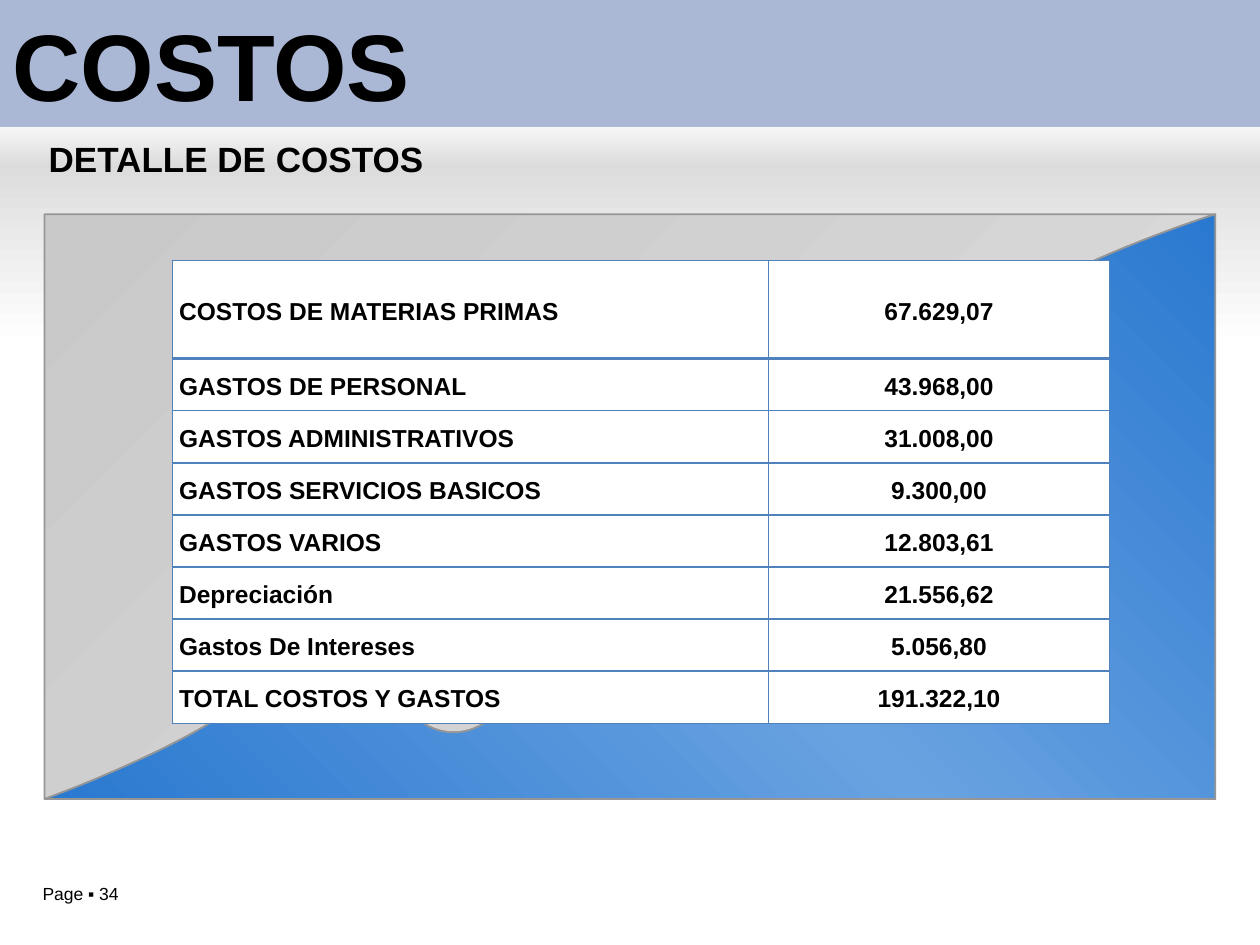
import pptx
import pptx.dml.color
import pptx.enum.shapes
import pptx.enum.text
import pptx.oxml
import pptx.oxml.ns
import pptx.util
from pptx.util import Cm

Pt = pptx.util.Pt
RGB = pptx.dml.color.RGBColor.from_string
ALIGN = pptx.enum.text.PP_ALIGN
MIDDLE = pptx.enum.text.MSO_ANCHOR.MIDDLE
RECT = pptx.enum.shapes.MSO_SHAPE.RECTANGLE
NS = pptx.oxml.ns.nsdecls("a")
qn = pptx.oxml.ns.qn

COLORS = {
    "text": "000000",
    "white": "FFFFFF",
    "band": "AAB7D5",
    "glow_top": "DBDBDB",
    "glow_bottom": "DDDDDD",
    "grey_dark": "C9C9C9",
    "grey_light": "DEDEDE",
    "blue": "2A79D0",
    "blue_light": "69A2E1",
    "outline": "969696",
    "border": "4F81BD",
}


def write(tf, text, size=14, bold=True, align=ALIGN.LEFT, spacing=None, after=None):
    p = tf.paragraphs[0]
    p.alignment = align
    if spacing is not None:
        p.line_spacing = spacing
    if after is not None:
        p.space_after = Pt(after)
    r = p.add_run()
    r.text = text
    r.font.name = "Arial"
    r.font.size = Pt(size)
    r.font.bold = bold
    r.font.color.rgb = RGB(COLORS["text"])


def gradient(sp, names, angle):
    sp.shadow.inherit = False
    sp.fill.background()
    stops = "".join(
        f'<a:gs pos="{100000 * i // (len(names) - 1)}"><a:srgbClr val="{COLORS[n]}"/></a:gs>'
        for i, n in enumerate(names)
    )
    fill = pptx.oxml.parse_xml(
        f'<a:gradFill {NS} rotWithShape="1"><a:gsLst>{stops}</a:gsLst>'
        f'<a:lin ang="{angle * 60000}" scaled="0"/></a:gradFill>'
    )
    spPr = sp._element.spPr
    spPr.replace(spPr.find(qn("a:noFill")), fill)


prs = pptx.Presentation()
prs.slide_width, prs.slide_height = Cm(25.4), Cm(19.05)
s = prs.slides.add_slide(prs.slide_layouts[5])

for top, height, names in [
    (3.35, 3.61, ["glow_bottom", "white"]),
    (2.29, 1.09, ["white", "glow_top"]),
]:
    sp = s.shapes.add_shape(RECT, 0, Cm(top), prs.slide_width, Cm(height))
    gradient(sp, names, 90)
    sp.line.fill.background()

title = s.shapes.title
title.left, title.top, title.width, title.height = 0, 0, prs.slide_width, Cm(2.56)
title.fill.solid()
title.fill.fore_color.rgb = RGB(COLORS["band"])
title.text_frame.vertical_anchor = MIDDLE
title.text_frame.auto_size = pptx.enum.text.MSO_AUTO_SIZE.NONE
write(title.text_frame, "COSTOS", size=54)

sp = s.shapes.add_textbox(Cm(0.85), Cm(2.77), Cm(7.82), Cm(0.86))
tf = sp.text_frame
tf.word_wrap = False
tf.margin_left = tf.margin_right = tf.margin_top = tf.margin_bottom = 0
write(tf, "DETALLE DE COSTOS", size=20, align=ALIGN.CENTER)

sp = s.shapes.add_textbox(Cm(0.61), Cm(17.68), Cm(3.73), Cm(0.69))
sp.text_frame.word_wrap = True
write(sp.text_frame, "Page ▪ 34", size=10, bold=False)

UNIT = Cm(0.0254)
START = (35, 635)
CURVES = [
    [(35, 635), (61, 625), (61, 625)],
    [(98, 610), (166, 580), (189, 558)],
    [(192, 555), (209, 540), (233, 528)],
    [(257, 516), (279, 511), (284, 510)],
    [(299, 507), (311, 516), (313, 520)],
    [(318, 526), (318, 536), (318, 540)],
    [(318, 546), (320, 553), (322, 559)],
    [(333, 580), (359, 588), (380, 577)],
    [(400, 567), (409, 542), (398, 521)],
    [(395, 515), (390, 510), (385, 506)],
    [(382, 504), (374, 498), (372, 491)],
    [(371, 486), (370, 473), (381, 462)],
    [(385, 459), (402, 444), (426, 431)],
    [(450, 419), (473, 414), (477, 414)],
    [(477, 414), (503, 409), (529, 395)],
    [(556, 382), (574, 365), (574, 365)],
    [(585, 355), (584, 340), (583, 337)],
    [(581, 329), (573, 323), (570, 321)],
    [(565, 317), (560, 312), (557, 306)],
    [(546, 286), (555, 260), (576, 250)],
    [(596, 239), (622, 248), (633, 268)],
    [(636, 274), (637, 281), (637, 288)],
    [(637, 291), (637, 301), (642, 307)],
    [(644, 310), (654, 319), (669, 317)],
    [(678, 315), (700, 310), (722, 299)],
    [(743, 289), (759, 277), (767, 268)],
    [(822, 215), (965, 170), (965, 170)],
]
edge = [point for curve in CURVES for point in curve]

for corner, names, angle in [
    ((35, 170), ["grey_dark", "grey_light"], 45),
    ((965, 635), ["blue", "blue_light", "blue"], 315),
]:
    builder = s.shapes.build_freeform(*START, scale=UNIT)
    builder.add_line_segments(edge + [corner], close=True)
    sp = builder.convert_to_shape()
    lines = list(sp._element.iter(qn("a:lnTo")))
    for i in range(0, len(edge), 3):
        curve = pptx.oxml.parse_xml(f"<a:cubicBezTo {NS}/>")
        lines[i].addprevious(curve)
        for line in lines[i:i + 3]:
            curve.append(line[0])
            line.getparent().remove(line)
    sp.left, sp.top, sp.width, sp.height = Cm(0.9), Cm(4.32), Cm(23.6), Cm(11.79)
    gradient(sp, names, angle)
    sp.line.color.rgb = RGB(COLORS["outline"])
    sp.line.width = Pt(1)

ROWS = [
    ("COSTOS DE MATERIAS PRIMAS", "67.629,07", 10),
    ("GASTOS DE PERSONAL", "43.968,00", 10),
    ("GASTOS ADMINISTRATIVOS", "31.008,00", 10),
    ("GASTOS SERVICIOS BASICOS", "9.300,00", 10),
    ("GASTOS VARIOS", "12.803,61", 10),
    ("Depreciación", "21.556,62", 0),
    ("Gastos De Intereses", "5.056,80", 0),
    ("TOTAL COSTOS Y GASTOS", "191.322,10", 10),
]
table = s.shapes.add_table(len(ROWS), 2, Cm(3.48), Cm(5.25), Cm(18.89), Cm(9.33)).table
table.first_row = table.horz_banding = False
table.columns[0].width, table.columns[1].width = Cm(12.01), Cm(6.88)
for i, (label, amount, after) in enumerate(ROWS):
    table.rows[i].height = Cm(1.05 if i else 1.98)
    for j, (text, align) in enumerate([(label, ALIGN.JUSTIFY), (amount, ALIGN.CENTER)]):
        cell = table.cell(i, j)
        cell.vertical_anchor = MIDDLE
        cell.margin_left = cell.margin_right = Cm(0.13)
        cell.margin_top = cell.margin_bottom = 0
        for side in "LRTB":
            thick = (i, side) in [(0, "B"), (1, "T")]
            cell._tc.get_or_add_tcPr().append(pptx.oxml.parse_xml(
                f'<a:ln{side} {NS} w="{Pt(2.25 if thick else 1)}"><a:solidFill>'
                f'<a:srgbClr val="{COLORS["border"]}"/></a:solidFill></a:ln{side}>'
            ))
        cell.fill.solid()
        cell.fill.fore_color.rgb = RGB(COLORS["white"])
        write(cell.text_frame, text, align=align, spacing=1.15, after=after)

s.shapes._spTree.append(title._element)
prs.save("out.pptx")
